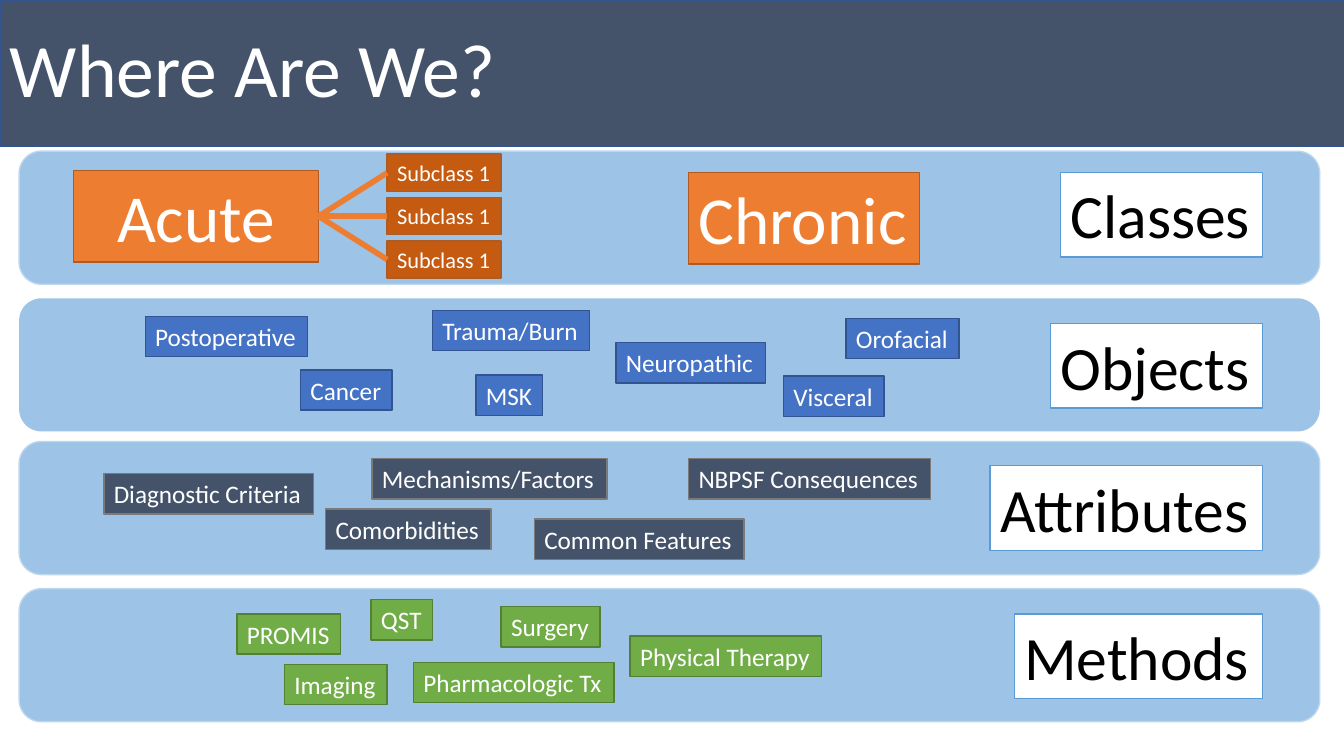
from pptx import Presentation
from pptx.dml.color import RGBColor
from pptx.enum.shapes import MSO_CONNECTOR, MSO_SHAPE
from pptx.enum.text import MSO_ANCHOR, MSO_AUTO_SIZE, PP_ALIGN
from pptx.oxml.ns import qn
from pptx.util import Inches, Pt
from lxml import etree

RECTANGLE = MSO_SHAPE.RECTANGLE
ROUNDED = MSO_SHAPE.ROUNDED_RECTANGLE
STRAIGHT = MSO_CONNECTOR.STRAIGHT
LEFT, CENTER = PP_ALIGN.LEFT, PP_ALIGN.CENTER
TOP, MIDDLE = MSO_ANCHOR.TOP, MSO_ANCHOR.MIDDLE
FIT_SHAPE, NO_FIT = MSO_AUTO_SIZE.SHAPE_TO_FIT_TEXT, MSO_AUTO_SIZE.NONE

# Content
FONT = "Calibri"
WHITE, BLACK = "FFFFFF", "000000"
SLIDE_WIDTH, SLIDE_HEIGHT = 13.33, 7.5
TITLE = "Where Are We?"
TITLE_HEIGHT = 1.45
BAND_LEFT, BAND_WIDTH, BAND_HEIGHT = 0.19, 12.9, 1.32
LABEL_RIGHT, LABEL_HEIGHT = 12.52, 0.84
TAG_HEIGHT = 0.4

# Each band: top, fill, line, label, label top, label width,
# tag fill, tag line, tags as (text, left, top, width)
BANDS = [
    (1.5, "9DC3E6", "BDD7EE", "Classes", 1.71, 2.0, None, None, []),
    (2.96, "9DC4E6", None, "Objects", 3.21, 2.1, "4472C4", "325491", [
        ("Postoperative", 1.44, 3.14, 1.61),
        ("Cancer", 2.98, 3.67, 0.91),
        ("Trauma/Burn", 4.29, 3.08, 1.56),
        ("MSK", 4.72, 3.72, 0.66),
        ("Neuropathic", 6.11, 3.4, 1.48),
        ("Visceral", 7.77, 3.73, 1.0),
        ("Orofacial", 8.39, 3.16, 1.12),
    ]),
    (4.38, "9DC3E6", "BDD7EE", "Attributes", 4.62, 2.7, "44536A", "7A7A7A", [
        ("Diagnostic Criteria", 1.03, 4.7, 2.08),
        ("Comorbidities", 3.23, 5.05, 1.64),
        ("Mechanisms/Factors", 3.69, 4.55, 2.33),
        ("Common Features", 5.3, 5.15, 2.08),
        ("NBPSF Consequences", 6.83, 4.55, 2.4),
    ]),
    (5.84, "9DC3E6", "BDD7EE", "Methods", 6.09, 2.46, "70AD47", "538035", [
        ("PROMIS", 2.35, 6.09, 1.03),
        ("Imaging", 2.82, 6.59, 1.02),
        ("QST", 3.68, 5.95, 0.61),
        ("Pharmacologic Tx", 4.1, 6.57, 1.99),
        ("Surgery", 4.97, 6.02, 0.98),
        ("Physical Therapy", 6.25, 6.31, 1.9),
    ]),
]

ORANGE, DARK_ORANGE, ORANGE_LINE = "ED7D31", "C55A11", "AF5C24"
ACUTE_BOX = (0.73, 1.69, 2.43, 0.91)
CHRONIC_BOX = (6.83, 1.71, 2.29, 0.91)
SUBCLASSES = ["Subclass 1", "Subclass 1", "Subclass 1"]
SUBCLASS_LEFT, SUBCLASS_TOP, SUBCLASS_STEP = 3.84, 1.53, 0.43
SUBCLASS_WIDTH, SUBCLASS_HEIGHT = 1.13, 0.37


def color(hex_value):
    return RGBColor.from_string(hex_value)


def add_box(slide, box, fill, line=None, kind=RECTANGLE):
    shape = slide.shapes.add_shape(kind, *(Inches(length) for length in box))
    shape.shadow.inherit = False
    shape.fill.solid()
    shape.fill.fore_color.rgb = color(fill)
    if line:
        shape.line.color.rgb = color(line)
        shape.line.width = Pt(1)
    else:
        shape.line.fill.background()
    return shape


def add_text(shape, text, size, font_color=WHITE, align=LEFT, anchor=TOP,
             wrap=False, fit=FIT_SHAPE):
    frame = shape.text_frame
    frame.word_wrap = wrap
    frame.auto_size = fit
    frame.vertical_anchor = anchor
    paragraph = frame.paragraphs[0]
    paragraph.alignment = align
    run = paragraph.add_run()
    run.text = text
    run.font.name = FONT
    run.font.size = Pt(size)
    run.font.color.rgb = color(font_color)
    return paragraph


def add_branch(slide, start, end):
    points = (Inches(length) for length in start + end)
    connector = slide.shapes.add_connector(STRAIGHT, *points)
    connector.line.color.rgb = color(ORANGE)
    connector.line.width = Pt(4)
    properties = connector._element.find(qn("p:spPr"))
    etree.SubElement(properties, qn("a:effectLst"))


def main():
    presentation = Presentation()
    presentation.slide_width = Inches(SLIDE_WIDTH)
    presentation.slide_height = Inches(SLIDE_HEIGHT)
    slide = presentation.slides.add_slide(presentation.slide_layouts[6])

    # Title bar
    title = add_box(slide, (0, 0, SLIDE_WIDTH, TITLE_HEIGHT), "44536A", "325491")
    paragraph = add_text(title, TITLE, 54, anchor=MIDDLE, wrap=True, fit=NO_FIT)
    paragraph.line_spacing = 0.9

    # Bands with their label and tags
    for (top, fill, line, label, label_top, label_width,
         tag_fill, tag_line, tags) in BANDS:
        add_box(slide, (BAND_LEFT, top, BAND_WIDTH, BAND_HEIGHT), fill, line, ROUNDED)
        label_box = (LABEL_RIGHT - label_width, label_top, label_width, LABEL_HEIGHT)
        add_text(add_box(slide, label_box, WHITE, "5B9BD5"), label, 44, BLACK)
        for text, left, tag_top, width in tags:
            tag_box = (left, tag_top, width, TAG_HEIGHT)
            add_text(add_box(slide, tag_box, tag_fill, tag_line), text, 18)

    # Acute and chronic classes
    acute = add_box(slide, ACUTE_BOX, ORANGE, ORANGE_LINE)
    add_text(acute, "Acute", 48, align=CENTER, wrap=True)
    chronic = add_box(slide, CHRONIC_BOX, ORANGE, ORANGE_LINE)
    add_text(chronic, "Chronic", 48)

    # Subclasses branching from the acute class
    left, top, width, height = ACUTE_BOX
    branch_start = (left + width, top + height / 2)
    for index, text in enumerate(SUBCLASSES):
        top = SUBCLASS_TOP + index * SUBCLASS_STEP
        box = (SUBCLASS_LEFT, top, SUBCLASS_WIDTH, SUBCLASS_HEIGHT)
        add_text(add_box(slide, box, DARK_ORANGE, ORANGE_LINE), text, 16)
        add_branch(slide, branch_start, (SUBCLASS_LEFT, top + SUBCLASS_HEIGHT / 2))

    presentation.save("out.pptx")


if __name__ == "__main__":
    main()
